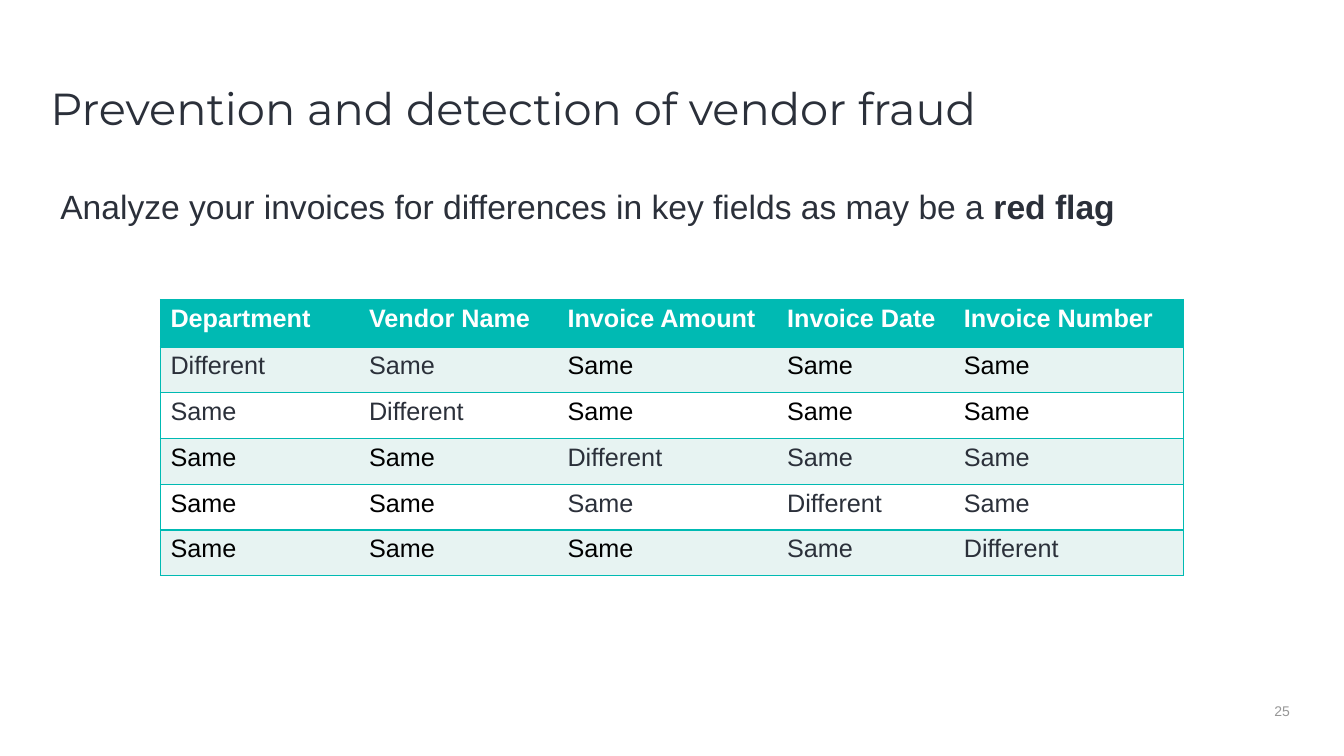
import pptx
import pptx.dml.color
import pptx.enum.text
import pptx.oxml
import pptx.oxml.ns
import pptx.util

Pt = pptx.util.Pt
RGBColor = pptx.dml.color.RGBColor
PP_ALIGN = pptx.enum.text.PP_ALIGN
MSO_ANCHOR = pptx.enum.text.MSO_ANCHOR

TEAL = RGBColor(0x00, 0xBA, 0xB3)
MINT = RGBColor(0xE7, 0xF3, 0xF2)
WHITE = RGBColor(0xFF, 0xFF, 0xFF)
INK = RGBColor(0x2B, 0x30, 0x3A)
BLACK = RGBColor(0x00, 0x00, 0x00)
GRAY = RGBColor(0x97, 0x97, 0x97)

TITLE = "Prevention and detection of vendor fraud"
MESSAGE = [
    ("Analyze your invoices for differences in key fields as may be a ", False),
    ("red flag", True),
]
PAGE_NUMBER = "25"
HEADERS = ["Department", "Vendor Name", "Invoice Amount", "Invoice Date", "Invoice Number"]
CHECKS = [
    ["Different", "Same", "Same", "Same", "Same"],
    ["Same", "Different", "Same", "Same", "Same"],
    ["Same", "Same", "Different", "Same", "Same"],
    ["Same", "Same", "Same", "Different", "Same"],
    ["Same", "Same", "Same", "Same", "Different"],
]
INK_COLUMNS = [{0, 1}, {0, 1}, {2, 3, 4}, {2, 3, 4}, {3, 4}]
COLUMN_WIDTHS = [141.8, 141.8, 156.9, 126.2, 164]
HEADER_HEIGHT = 34
ROW_HEIGHT = 32.7
TABLE_LEFT, TABLE_TOP = 114.6, 213.9


def add_span(para, text, size, color, bold=False, font="Arial"):
    span = para.add_run()
    span.text = text
    span.font.name = font
    span.font.size = Pt(size)
    span.font.bold = bold
    span.font.color.rgb = color


def add_text_box(page, left, top, width, height, margins):
    box = page.shapes.add_textbox(Pt(left), Pt(top), Pt(width), Pt(height))
    frame = box.text_frame
    frame.word_wrap = True
    frame.margin_left, frame.margin_top, frame.margin_right, frame.margin_bottom = map(Pt, margins)
    return frame


def add_border(cell, side, color):
    paint = "<a:noFill/>"
    if color is not None:
        paint = f'<a:solidFill><a:srgbClr val="{color}"/></a:solidFill>'
    namespace = pptx.oxml.ns.nsdecls("a")
    line = pptx.oxml.parse_xml(f'<a:ln{side} {namespace} w="12700">{paint}</a:ln{side}>')
    cell._tc.get_or_add_tcPr().append(line)


def add_table(page):
    rows = [HEADERS] + CHECKS
    heights = [HEADER_HEIGHT] + [ROW_HEIGHT] * len(CHECKS)
    table = page.shapes.add_table(
        len(rows), len(HEADERS), Pt(TABLE_LEFT), Pt(TABLE_TOP),
        Pt(sum(COLUMN_WIDTHS)), Pt(sum(heights)),
    ).table
    table.horz_banding = False
    for column, width in zip(table.columns, COLUMN_WIDTHS):
        column.width = Pt(width)
    last = len(HEADERS) - 1
    for row_index, (words, height) in enumerate(zip(rows, heights)):
        table.rows[row_index].height = Pt(height)
        is_header = row_index == 0
        fill = TEAL if is_header else MINT if row_index % 2 else WHITE
        for column_index, word in enumerate(words):
            cell = table.cell(row_index, column_index)
            add_border(cell, "L", TEAL if column_index == 0 else None)
            add_border(cell, "R", TEAL if column_index == last else None)
            add_border(cell, "T", TEAL)
            add_border(cell, "B", TEAL)
            cell.fill.solid()
            cell.fill.fore_color.rgb = fill
            if is_header:
                color = WHITE
            else:
                color = INK if column_index in INK_COLUMNS[row_index - 1] else BLACK
            add_span(cell.text_frame.paragraphs[0], word, 18, color, is_header)


def main():
    deck = pptx.Presentation()
    deck.slide_width, deck.slide_height = Pt(960), Pt(540)
    page = deck.slides.add_slide(deck.slide_layouts[6])

    number = add_text_box(page, 901.4, 501.8, 28.8, 12.2, (0, 0, 0, 0))
    number.vertical_anchor = MSO_ANCHOR.MIDDLE
    number.paragraphs[0].alignment = PP_ALIGN.CENTER
    add_span(number.paragraphs[0], PAGE_NUMBER, 10, GRAY)

    title = add_text_box(page, 36, 54.7, 888, 42.5, (0, 7.2, 0, 0))
    title.paragraphs[0].line_spacing = 0.9
    add_span(title.paragraphs[0], TITLE, 32, INK, font="Montserrat")

    message = add_text_box(page, 36, 132.5, 888, 360.7, (7.2, 3.6, 7.2, 3.6))
    message.paragraphs[0].line_spacing = 0.9
    for text, bold in MESSAGE:
        add_span(message.paragraphs[0], text, 24, INK, bold)

    add_table(page)
    deck.save("out.pptx")


if __name__ == "__main__":
    main()
